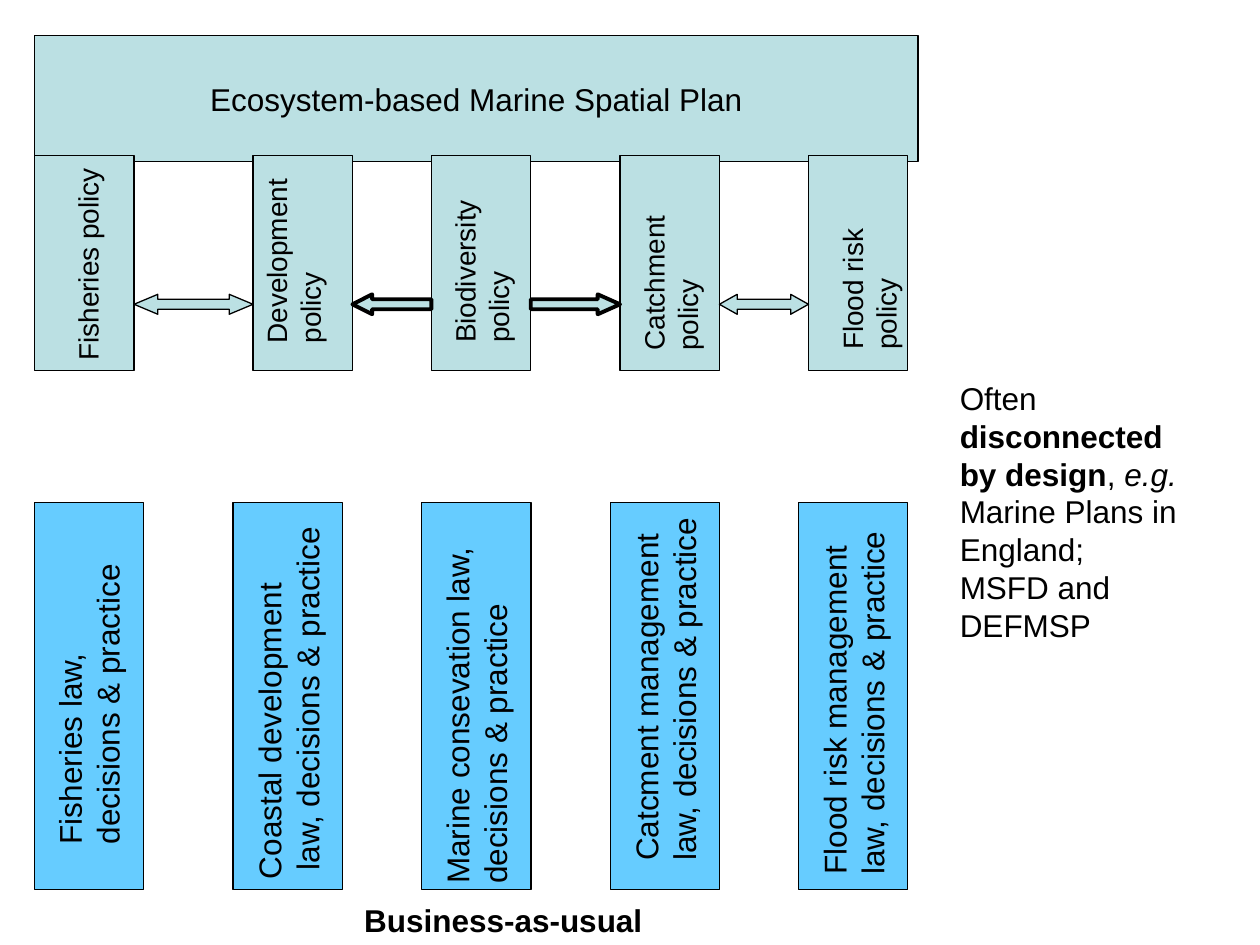
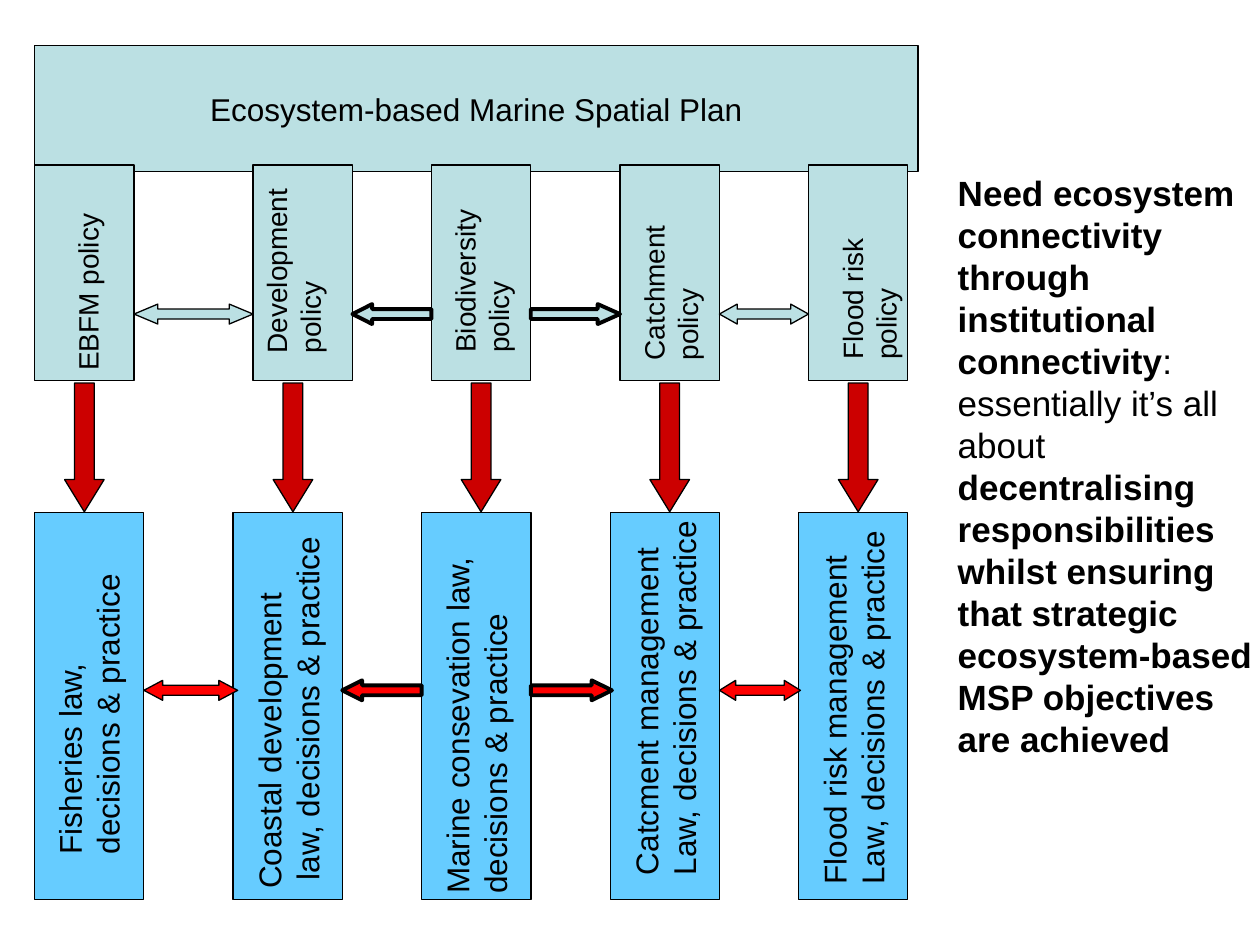
import dataclasses

import pptx
import pptx.dml.color
import pptx.enum.shapes
import pptx.enum.text
import pptx.util

Pt = pptx.util.Pt
Shapes = pptx.enum.shapes.MSO_SHAPE
BOLD = {"bold": True}
ITALIC = {"italic": True}
PLAIN = {}


@dataclasses.dataclass(frozen=True)
class Theme:
    """Colours, type sizes and line widths shared by both slides."""

    font: str = "Arial"
    ink: str = "000000"
    policy: str = "BBE0E3"
    law: str = "66CCFF"
    delivery: str = "CC0000"
    law_link: str = "FF0000"
    policy_size: float = 16
    body_size: float = 18
    message_size: float = 20
    thin: float = 0.75
    thick: float = 2.25


@dataclasses.dataclass(frozen=True)
class Label:
    """Upward-reading text given by its centre and its length."""

    lines: tuple
    x: float
    y: float
    length: float
    wrap: bool = False


@dataclasses.dataclass(frozen=True)
class Row:
    """A row of equal boxes and the arrows between them."""

    lefts: tuple
    width: float
    top: float
    height: float
    arrow_top: float
    overruns: tuple


THEME = Theme()
SECOND_SLIDE_SHIFT = 5.6
ARROW_HEIGHT = 11.4
LINKS = (
    (Shapes.LEFT_RIGHT_ARROW, 0.2, THEME.thin),
    (Shapes.LEFT_ARROW, 0.25, THEME.thick),
    (Shapes.RIGHT_ARROW, 0.25, THEME.thick),
    (Shapes.LEFT_RIGHT_ARROW, 0.2, THEME.thin),
)
LAWS = Row((19.8, 133.2, 241, 348.7, 456.4), 62.4, 287.3, 221, 383.2, (2.6, 0, 1, 1))
POLICIES = Row((19.8, 144.6, 246.5, 354.3, 462), 56.8, 88.7, 123, 168.2, (0, 0, 0, 0))
DELIVERY_CENTRES = (48.2, 167.4, 274.9, 382.7, 490.4)

SHARED_POLICY_LABELS = (
    Label(("Development", "policy"), 167.4, 149, 108.7),
    Label(("Biodiversity", "policy"), 275, 154.8, 96.5),
    Label(("Catchment", "policy"), 383, 161.3, 92.2),
    Label(("Flood risk", "policy"), 496.4, 150.5, 113, True),
)
FISHERIES_POLICY = Label(("Fisheries policy",), 50, 150.8, 124.6)
EBFM_POLICY = Label(("EBFM policy",), 50, 161.1, 104.4)


def law_labels(last_word, catchment_length):
    """Return the law labels with the given opening word on the last two."""
    closing = f"{last_word}, decisions & practice"
    return (
        Label(("Fisheries law,", "decisions & practice"), 50.4, 401.6, 176),
        Label(("Coastal development", " law, decisions & practice"), 164.5, 401, 216.7),
        Label(("Marine consevation law,", "decisions & practice"), 271.8, 406, 212.4),
        Label(("Catcment management", closing), 379.8, 392.8, catchment_length),
        Label(("Flood risk management", closing), 487.4, 398.2, 217.4),
    )


def set_attributes(target, values):
    """Set each named value on the target."""
    for name, value in values.items():
        setattr(target, name, value)


def write_paragraphs(shape, paragraphs, size, frame_format, alignment=None):
    """Write paragraphs made of (text, font format) runs."""
    frame = shape.text_frame
    set_attributes(frame, frame_format)
    for index, runs in enumerate(paragraphs):
        paragraph = frame.add_paragraph() if index else frame.paragraphs[0]
        paragraph.alignment = alignment
        for text, font_format in runs:
            run = paragraph.add_run()
            run.text = text
            set_attributes(run.font, {"name": THEME.font, "size": Pt(size), **font_format})
            run.font.color.rgb = pptx.dml.color.RGBColor.from_string(THEME.ink)


def add_block(slide, kind, box, fill, line_width=THEME.thin):
    """Add a filled and outlined preset shape."""
    shape = slide.shapes.add_shape(kind, *map(Pt, box))
    shape.shadow.inherit = False
    shape.fill.solid()
    shape.fill.fore_color.rgb = pptx.dml.color.RGBColor.from_string(fill)
    shape.line.color.rgb = pptx.dml.color.RGBColor.from_string(THEME.ink)
    shape.line.width = Pt(line_width)
    return shape


def add_text(slide, box, paragraphs, size, wrap=True, rotation=0):
    """Add a text box that grows with its text."""
    shape = slide.shapes.add_textbox(*map(Pt, box))
    shape.rotation = rotation
    frame_format = {
        "word_wrap": wrap,
        "auto_size": pptx.enum.text.MSO_AUTO_SIZE.SHAPE_TO_FIT_TEXT,
    }
    write_paragraphs(shape, paragraphs, size, frame_format)


def add_labels(slide, labels, size, shift):
    """Add upward-reading labels."""
    for label in labels:
        height = 7.2 + 1.2 * size * len(label.lines)
        left = label.x - label.length / 2
        top = label.y + shift - height / 2
        paragraphs = [[(line, PLAIN)] for line in label.lines]
        add_text(slide, (left, top, label.length, height), paragraphs, size, label.wrap, 270)


def add_boxes(slide, row, fill, shift):
    """Add the boxes of a row."""
    for left in row.lefts:
        box = (left, row.top + shift, row.width, row.height)
        add_block(slide, Shapes.RECTANGLE, box, fill)


def add_arrow(slide, kind, box, fill, head_ratio, line_width=THEME.thin):
    """Add a block arrow whose head is a share of its length."""
    arrow = add_block(slide, kind, box, fill, line_width)
    arrow.adjustments[0] = 0.5
    arrow.adjustments[1] = head_ratio * max(box[2:]) / min(box[2:])


def add_links(slide, row, fill, shift):
    """Add an arrow in each gap between the boxes of a row."""
    gaps = zip(row.lefts, row.lefts[1:], row.overruns, LINKS)
    for left, next_left, overrun, (kind, head_ratio, line_width) in gaps:
        start = left + row.width
        box = (start, row.arrow_top + shift, next_left - start + overrun, ARROW_HEIGHT)
        add_arrow(slide, kind, box, fill, head_ratio, line_width)


def add_delivery_arrows(slide, shift):
    """Add an arrow from each policy down to its law."""
    width = 22.6
    for centre in DELIVERY_CENTRES:
        box = (centre - width / 2, 213.3 + shift, width, 73.6)
        add_arrow(slide, Shapes.DOWN_ARROW, box, THEME.delivery, 0.25)


def add_plan(slide, shift):
    """Add the spatial plan bar above the policies."""
    plan = add_block(slide, Shapes.RECTANGLE, (19.8, 20.5 + shift, 504.7, 72), THEME.policy)
    frame_format = {
        "word_wrap": False,
        "vertical_anchor": pptx.enum.text.MSO_ANCHOR.MIDDLE,
    }
    title = [[("Ecosystem-based Marine Spatial Plan", PLAIN)]]
    centre = pptx.enum.text.PP_ALIGN.CENTER
    write_paragraphs(plan, title, THEME.body_size, frame_format, centre)


def add_framework(presentation, first_policy, laws, shift=0):
    """Add a slide with the plan, its policies and the laws below."""
    slide = presentation.slides.add_slide(presentation.slide_layouts[6])
    add_boxes(slide, LAWS, THEME.law, shift)
    add_labels(slide, laws, THEME.body_size, shift)
    add_plan(slide, shift)
    add_boxes(slide, POLICIES, THEME.policy, shift)
    policies = (first_policy, *SHARED_POLICY_LABELS)
    add_labels(slide, policies, THEME.policy_size, shift)
    add_links(slide, POLICIES, THEME.policy, shift)
    return slide


def add_disconnected_slide(presentation):
    """Add the slide on business as usual."""
    slide = add_framework(presentation, FISHERIES_POLICY, law_labels("law", 212.4))
    caption = [[("Business-as-usual", BOLD)]]
    add_text(slide, (201, 511.2, 173.5, 28.8), caption, THEME.body_size, wrap=False)
    comment = [
        [
            ("Often ", PLAIN),
            ("disconnected by design", BOLD),
            (", ", PLAIN),
            ("e.g.", ITALIC),
            (" Marine Plans in England;", PLAIN),
        ],
        [("MSFD and DEFMSP", PLAIN)],
    ]
    add_text(slide, (541.4, 213.1, 139, 160), comment, THEME.body_size)


def add_connected_slide(presentation):
    """Add the slide on institutional connectivity."""
    shift = SECOND_SLIDE_SHIFT
    slide = add_framework(presentation, EBFM_POLICY, law_labels("Law", 217.4), shift)
    add_delivery_arrows(slide, shift)
    add_links(slide, LAWS, THEME.law_link, shift)
    message = [
        [("Need ecosystem connectivity", BOLD)],
        [("through", BOLD)],
        [
            ("institutional connectivity", BOLD),
            (": essentially it’s all about ", PLAIN),
            (
                "decentralising responsibilities whilst ensuring that "
                "strategic ecosystem-based MSP objectives are achieved",
                BOLD,
            ),
        ],
    ]
    add_text(slide, (540.2, 94.3, 188.6, 346.3), message, THEME.message_size)


def main():
    """Build and save the presentation."""
    presentation = pptx.Presentation()
    set_attributes(presentation, {"slide_width": Pt(720), "slide_height": Pt(540)})
    add_disconnected_slide(presentation)
    add_connected_slide(presentation)
    presentation.save("out.pptx")


if __name__ == "__main__":
    main()
